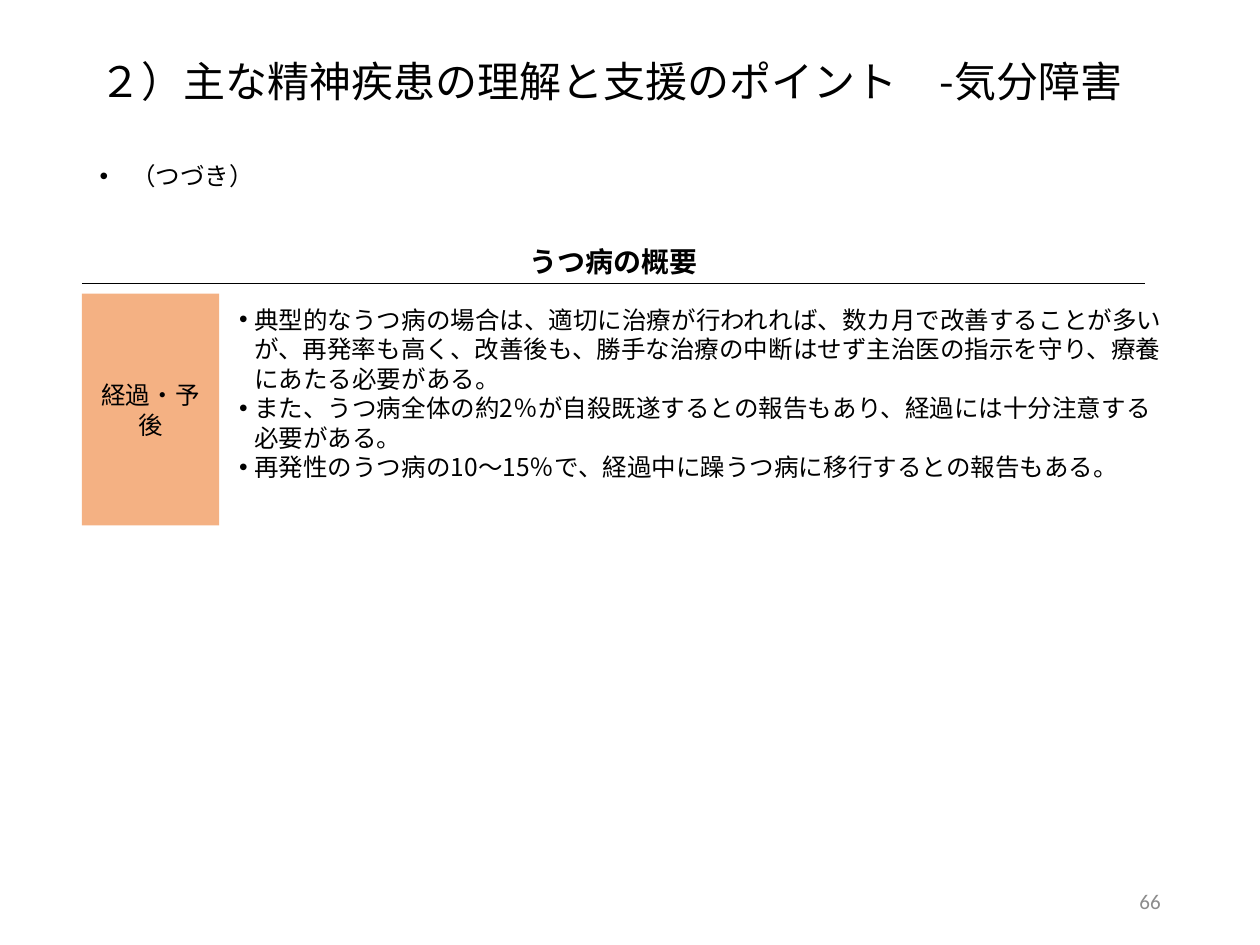
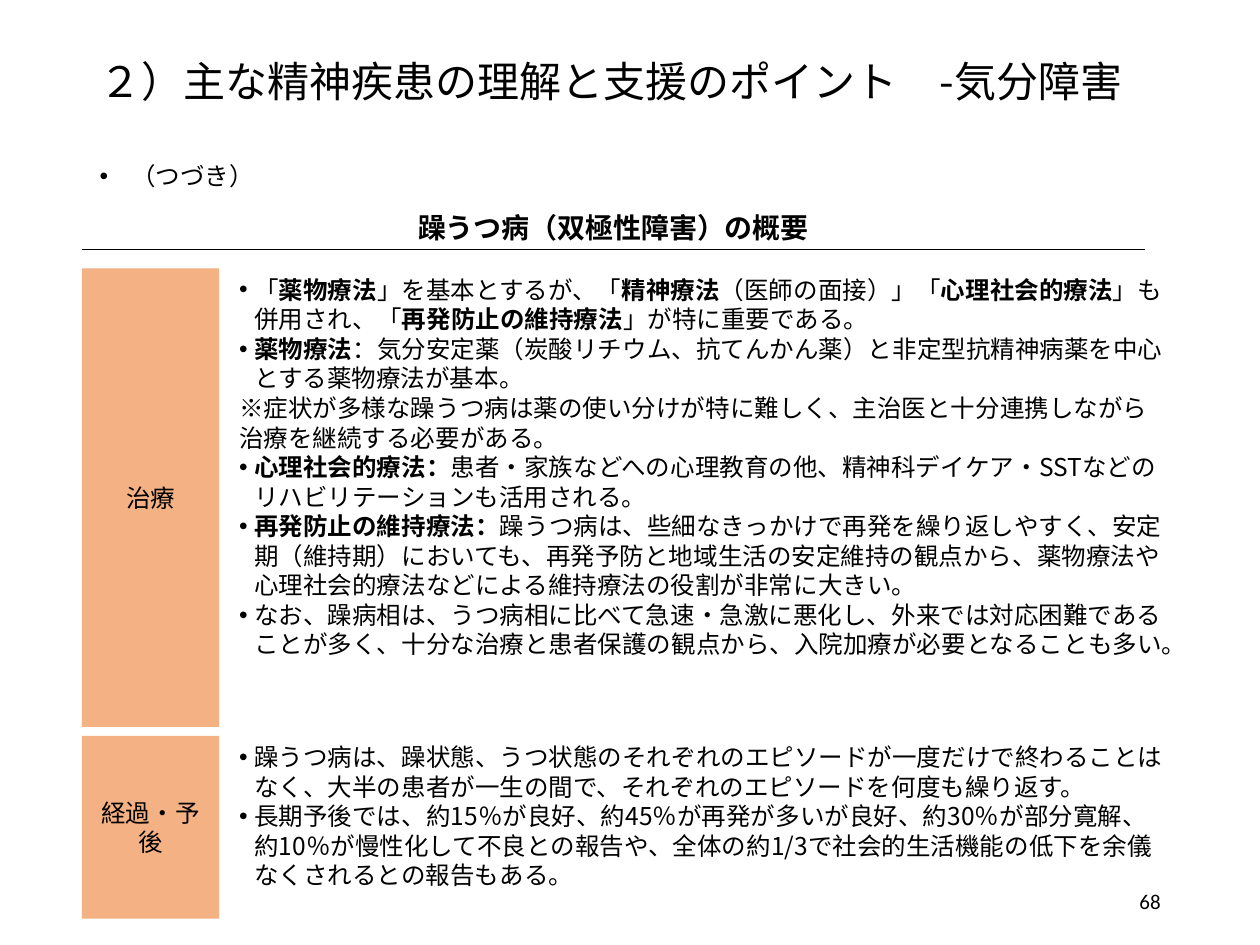
from lxml import etree
from pptx import Presentation
from pptx.dml.color import RGBColor
from pptx.enum.shapes import MSO_CONNECTOR, MSO_SHAPE
from pptx.enum.text import MSO_ANCHOR, PP_ALIGN
from pptx.oxml.ns import qn
from pptx.util import Inches, Pt

LEFT, CENTER, RIGHT = PP_ALIGN.LEFT, PP_ALIGN.CENTER, PP_ALIGN.RIGHT
TOP, MIDDLE = MSO_ANCHOR.TOP, MSO_ANCHOR.MIDDLE
RECTANGLE, STRAIGHT = MSO_SHAPE.RECTANGLE, MSO_CONNECTOR.STRAIGHT

COLORS = {"text": "000000", "label": "F4B183", "panel": "FFFFFF", "muted": "8C8C8C"}
JAPANESE, LATIN = "Noto Sans CJK JP", "Calibri"
LINE_PITCH = 1.207  # line height as a multiple of the text size

# Content: **...** is bold, a leading ※ marks a note without a bullet
TITLE = "２）主な精神疾患の理解と支援のポイント　-気分障害"
CONTINUED = "（つづき）"
SLIDES = [
    {
        "heading": "うつ病の概要", "heading_top": 1.91,
        "number": "66", "number_color": "muted",
        "rows": [
            {"label": "経過・予後", "top": 2.33, "label_height": 1.84,
             "panel_height": 1.58, "anchor": MIDDLE, "points": [
                 "典型的なうつ病の場合は、適切に治療が行われれば、数カ月で改善することが多いが、再発率も高く、改善後も、勝手な治療の中断はせず主治医の指示を守り、療養にあたる必要がある。",
                 "また、うつ病全体の約2％が自殺既遂するとの報告もあり、経過には十分注意する必要がある。",
                 "再発性のうつ病の10～15％で、経過中に躁うつ病に移行するとの報告もある。",
             ]},
        ],
    },
    {
        "heading": "躁うつ病（双極性障害）の概要", "heading_top": 1.64,
        "number": "68", "number_color": "text",
        "rows": [
            {"label": "治療", "top": 2.13, "label_height": 3.64,
             "panel_height": 3.64, "anchor": TOP, "points": [
                 "「**薬物療法**」を基本とするが、「**精神療法**（医師の面接）」「**心理社会的療法**」も併用され、「**再発防止の維持療法**」が特に重要である。",
                 "**薬物療法**：気分安定薬（炭酸リチウム、抗てんかん薬）と非定型抗精神病薬を中心とする薬物療法が基本。",
                 "※症状が多様な躁うつ病は薬の使い分けが特に難しく、主治医と十分連携しながら治療を継続する必要がある。",
                 "**心理社会的療法：**患者・家族などへの心理教育の他、精神科デイケア・SSTなどのリハビリテーションも活用される。",
                 "**再発防止の維持療法：**躁うつ病は、些細なきっかけで再発を繰り返しやすく、安定期（維持期）においても、再発予防と地域生活の安定維持の観点から、薬物療法や心理社会的療法などによる維持療法の役割が非常に大きい。",
                 "なお、躁病相は、うつ病相に比べて急速・急激に悪化し、外来では対応困難であることが多く、十分な治療と患者保護の観点から、入院加療が必要となることも多い。",
             ]},
            {"label": "経過・予後", "top": 5.84, "label_height": 1.45,
             "panel_height": 1.45, "anchor": TOP, "points": [
                 "躁うつ病は、躁状態、うつ状態のそれぞれのエピソードが一度だけで終わることはなく、大半の患者が一生の間で、それぞれのエピソードを何度も繰り返す。",
                 "長期予後では、約15％が良好、約45％が再発が多いが良好、約30％が部分寛解、約10％が慢性化して不良との報告や、全体の約1/3で社会的生活機能の低下を余儀なくされるとの報告もある。",
             ]},
        ],
    },
]

# Shared layout, in inches: left, top, width, height
TITLE_BOX = (0.69, 0.21, 8.62, 0.86)
BODY_BOX = (0.69, 1.23, 8.62, 6.12)
NUMBER_BOX = (7.06, 6.95, 2.25, 0.4)
LABEL_LEFT, LABEL_WIDTH = 0.65, 1.09
PANEL_LEFT, PANEL_WIDTH = 1.8, 7.56
HEADING_WIDTH, HEADING_HEIGHT, RULE_OFFSET = 8.44, 0.32, 0.34


def color(name):
    return RGBColor.from_string(COLORS[name])


def place(shape, box):
    shape.left, shape.top, shape.width, shape.height = map(Inches, box)


def add_bullet(paragraph, indent):
    properties = paragraph._p.get_or_add_pPr()
    properties.set("marL", str(Inches(indent)))
    properties.set("indent", str(-Inches(indent)))
    etree.SubElement(properties, qn("a:buFont")).set("typeface", "Arial")
    etree.SubElement(properties, qn("a:buChar")).set("char", "•")


def write(shape, lines, size, anchor=MIDDLE, align=LEFT, indent=None,
          bold=False, font=JAPANESE, ink="text"):
    frame = shape.text_frame
    frame.word_wrap = True
    frame.vertical_anchor = anchor
    for index, line in enumerate(lines):
        paragraph = frame.add_paragraph() if index else frame.paragraphs[0]
        paragraph.alignment = align
        paragraph.line_spacing = Pt(round(size * LINE_PITCH, 1))
        paragraph.space_before = Pt(0)
        if indent and not line.startswith("※"):
            add_bullet(paragraph, indent)
        paragraph.font.name = font
        paragraph.font.size = Pt(size)
        paragraph.font.bold = bold
        paragraph.font.color.rgb = color(ink)
        defaults = paragraph._p.pPr.find(qn("a:defRPr"))
        etree.SubElement(defaults, qn("a:ea")).set("typeface", font)
        # Every second piece lies between bold marks
        for position, piece in enumerate(line.split("**")):
            if piece:
                run = paragraph.add_run()
                run.text = piece
                if position % 2:
                    run.font.bold = True


def add_block(slide, box, fill):
    block = slide.shapes.add_shape(RECTANGLE, *map(Inches, box))
    block.shadow.inherit = False
    block.fill.solid()
    block.fill.fore_color.rgb = color(fill)
    block.line.fill.background()
    return block


def add_heading(slide, heading, top):
    box = (LABEL_LEFT, top, HEADING_WIDTH, HEADING_HEIGHT)
    write(add_block(slide, box, "panel"), [heading], 16, align=CENTER, bold=True)
    rule_y = Inches(top + RULE_OFFSET)
    rule = slide.shapes.add_connector(
        STRAIGHT, Inches(LABEL_LEFT), rule_y,
        Inches(LABEL_LEFT + HEADING_WIDTH), rule_y)
    rule.line.color.rgb = color("text")
    rule.line.width = Pt(0.5)
    etree.SubElement(rule._element.spPr, qn("a:effectLst"))


def add_row(slide, row):
    label_box = (LABEL_LEFT, row["top"], LABEL_WIDTH, row["label_height"])
    panel_box = (PANEL_LEFT, row["top"], PANEL_WIDTH, row["panel_height"])
    write(add_block(slide, label_box, "label"), [row["label"]], 14, align=CENTER)
    write(add_block(slide, panel_box, "panel"), row["points"], 14,
          anchor=row["anchor"], indent=0.12)


def build_slide(deck, content):
    slide = deck.slides.add_slide(deck.slide_layouts[1])

    # Title and continuation mark
    title, continued = slide.shapes.title, slide.placeholders[1]
    place(title, TITLE_BOX)
    write(title, [TITLE], 24)
    place(continued, BODY_BOX)
    write(continued, [CONTINUED], 14, anchor=TOP, indent=0.25)

    # Overview: heading above labelled rows
    add_heading(slide, content["heading"], content["heading_top"])
    for row in content["rows"]:
        add_row(slide, row)

    # Page number
    number = slide.shapes.add_textbox(*map(Inches, NUMBER_BOX))
    write(number, [content["number"]], 12, align=RIGHT, font=LATIN,
          ink=content["number_color"])


def main():
    deck = Presentation()
    deck.slide_width, deck.slide_height = Inches(10), Inches(7.5)
    for content in SLIDES:
        build_slide(deck, content)
    deck.save("out.pptx")


if __name__ == "__main__":
    main()
